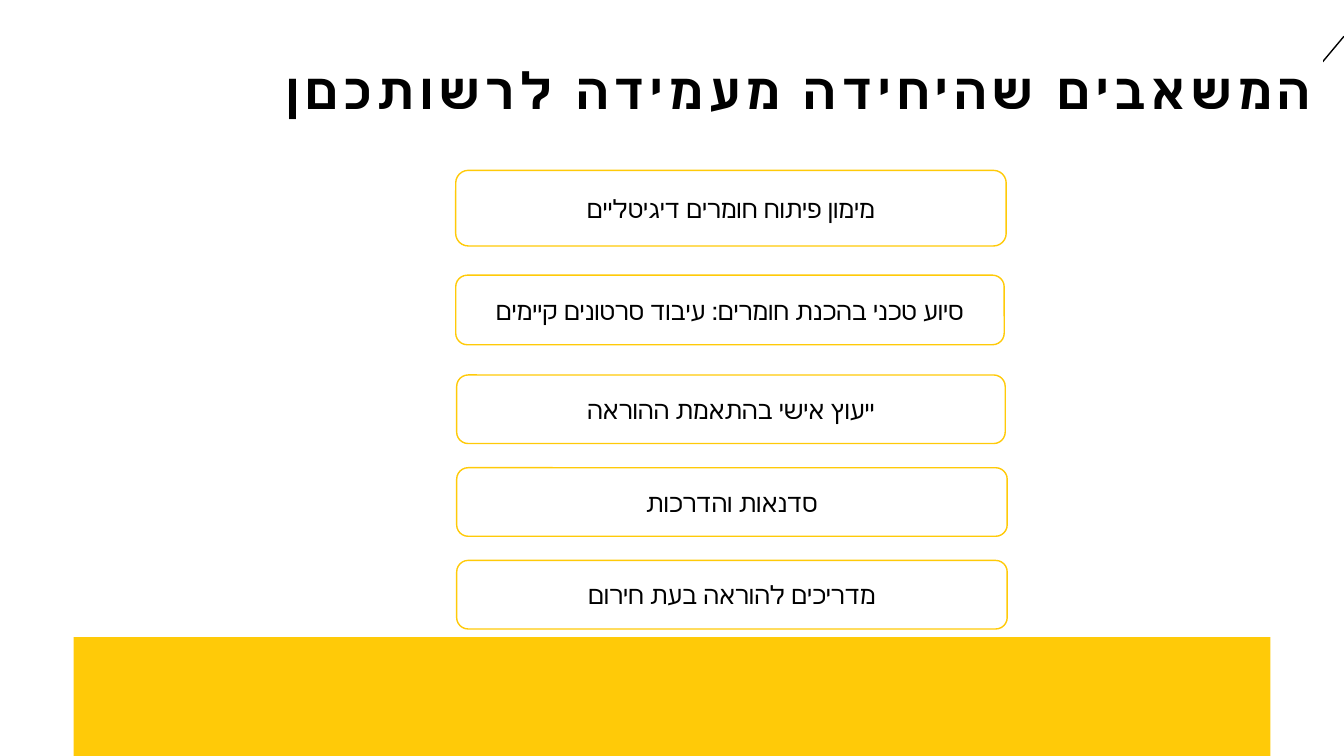
"""Build the slide that lists the resources offered to teaching staff."""
from dataclasses import dataclass

from pptx import Presentation
from pptx.dml.color import RGBColor
from pptx.enum.shapes import MSO_CONNECTOR, MSO_SHAPE
from pptx.enum.text import MSO_ANCHOR, PP_ALIGN
from pptx.oxml.ns import qn
from pptx.util import Inches, Pt
from lxml import etree

RECT = MSO_SHAPE.RECTANGLE
ROUNDED = MSO_SHAPE.ROUNDED_RECTANGLE
STRAIGHT = MSO_CONNECTOR.STRAIGHT
MIDDLE = MSO_ANCHOR.MIDDLE
CENTER = PP_ALIGN.CENTER
RIGHT = PP_ALIGN.RIGHT

FONT = "Calibri"
BLACK, WHITE, YELLOW = "000000", "FFFFFF", "FFCA08"
TITLE_SPACING = "300"


@dataclass(frozen=True)
class Resource:
    text: str
    left: float
    top: float
    width: float
    height: float


RESOURCES = (
    Resource("מימון פיתוח חומרים דיגיטליים", 4.52, 1.69, 5.46, 0.75),
    Resource("סיוע טכני בהכנת חומרים: עיבוד סרטונים קיימים", 4.52, 2.73, 5.44, 0.69),
    Resource("ייעוץ אישי בהתאמת ההוראה", 4.53, 3.72, 5.44, 0.68),
    Resource("סדנאות והדרכות", 4.53, 4.64, 5.46, 0.68),
    Resource("מדריכים להוראה בעת חירום", 4.53, 5.56, 5.46, 0.68),
)


def color(value: str) -> RGBColor:
    return RGBColor.from_string(value)


def add_panel(slide, kind, left: float, top: float, width: float, height: float,
              fill: str, outline: str = ""):
    panel = slide.shapes.add_shape(
        kind, Inches(left), Inches(top), Inches(width), Inches(height))
    panel.shadow.inherit = False
    panel.fill.solid()
    panel.fill.fore_color.rgb = color(fill)
    if outline:
        panel.line.color.rgb = color(outline)
        panel.line.width = Pt(1)
    else:
        panel.line.fill.background()
    return panel


def write(panel, text: str, size: int, align, bold: bool = False):
    frame = panel.text_frame
    frame.word_wrap = True
    frame.vertical_anchor = MIDDLE
    paragraph = frame.paragraphs[0]
    paragraph.text = text
    paragraph.alignment = align
    font = paragraph.font
    font.name = FONT
    font.size = Pt(size)
    font.bold = bold
    font.color.rgb = color(BLACK)
    return paragraph


def add_corner_line(slide) -> None:
    corner = slide.shapes.add_connector(
        STRAIGHT, Inches(13.33), Inches(0.36), Inches(12.82), Inches(0.97))
    corner.line.color.rgb = color(BLACK)
    corner.line.width = Pt(1)
    etree.SubElement(corner._element.spPr, qn("a:effectLst"))


def add_title(slide) -> None:
    banner = add_panel(slide, RECT, 0, 0.32, 13.12, 1.2, WHITE)
    title = write(banner, "המשאבים שהיחידה מעמידה לרשותכםן", 36, RIGHT, True)
    title.line_spacing = 0.9
    title._p.get_or_add_pPr().set("rtl", "1")
    title.runs[0]._r.get_or_add_rPr().set("spc", TITLE_SPACING)


def main() -> None:
    deck = Presentation()
    deck.slide_width, deck.slide_height = Inches(13.33), Inches(7.5)
    slide = deck.slides.add_slide(deck.slide_layouts[6])
    add_corner_line(slide)
    add_panel(slide, RECT, 0.73, 6.32, 11.87, 1.18, YELLOW)
    add_title(slide)
    for resource in RESOURCES:
        box = add_panel(slide, ROUNDED, resource.left, resource.top,
                        resource.width, resource.height, WHITE, YELLOW)
        write(box, resource.text, 18, CENTER)
    deck.save("out.pptx")


if __name__ == "__main__":
    main()
